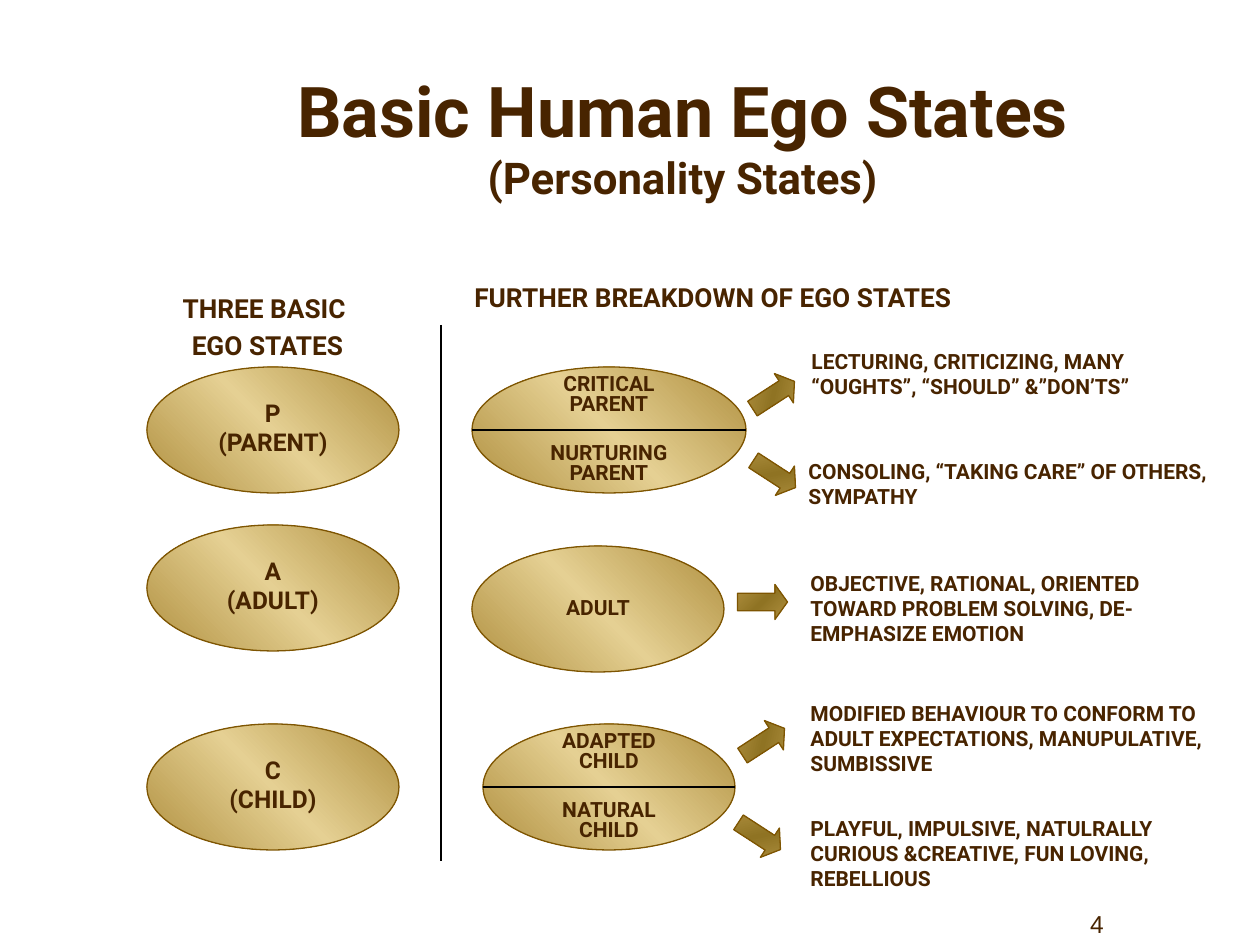
import copy
from dataclasses import dataclass

import pptx
import pptx.dml.color
import pptx.enum.shapes
import pptx.enum.text
import pptx.oxml
import pptx.oxml.ns
import pptx.util

ALIGN = pptx.enum.text.PP_ALIGN
ANCHOR = pptx.enum.text.MSO_ANCHOR
SHAPE = pptx.enum.shapes.MSO_SHAPE
PX_PER_INCH = 126


@dataclass(frozen=True)
class Theme:
    font: str = "Roboto"
    number_font: str = "Arial"
    ink: str = "482400"
    outline: str = "7E5502"
    rule: str = "000000"
    oval_fill: tuple = ("B09040", "E5D093", "B09040")
    arrow_fill: tuple = ("B09040", "8F7323", "B09040")
    title: int = 40
    subtitle: int = 25
    heading: int = 15
    state: int = 14
    label: int = 12
    line: float = 0.75


THEME = Theme()


def px(count):
    return pptx.util.Emu(round(count * 914400 / PX_PER_INCH))


def rgb(value):
    return pptx.dml.color.RGBColor.from_string(value)


def add_span(para, text, size, font=THEME.font, bold=True):
    span = para.add_run()
    span.text = text
    span.font.name = font
    span.font.size = pptx.util.Pt(size)
    span.font.bold = bold
    span.font.color.rgb = rgb(THEME.ink)


def write_lines(frame, lines, size, align=ALIGN.LEFT, spacing=None, gap=0, **style):
    """Write one paragraph per line, with gap points between them."""
    frame.word_wrap = True
    for index, line in enumerate(lines):
        para = frame.add_paragraph() if index else frame.paragraphs[0]
        para.alignment = align
        para.line_spacing = spacing
        para.space_before = pptx.util.Pt(gap if index else 0)
        add_span(para, line, size, **style)


def add_title(page, title, subtitle):
    holder = page.shapes.title
    holder.left, holder.top, holder.width, holder.height = map(px, (147, 100, 1071, 110))
    frame = holder.text_frame
    frame.auto_size = pptx.enum.text.MSO_AUTO_SIZE.NONE
    frame.vertical_anchor = ANCHOR.BOTTOM
    para = frame.paragraphs[0]
    para.alignment = ALIGN.CENTER
    add_span(para, title, THEME.title)
    para.add_line_break()
    add_span(para, subtitle, THEME.subtitle)


def add_text(page, left, top, width, height, lines, size, anchor=ANCHOR.TOP, **style):
    box = page.shapes.add_textbox(*map(px, (left, top, width, height)))
    box.text_frame.vertical_anchor = anchor
    write_lines(box.text_frame, lines, size, **style)


def add_gold_shape(page, kind, left, top, width, height, colors):
    """Add an outlined shape with a diagonal three-stop gradient."""
    shape = page.shapes.add_shape(kind, *map(px, (left, top, width, height)))
    shape.shadow.inherit = False
    shape.line.color.rgb = rgb(THEME.outline)
    shape.line.width = pptx.util.Pt(THEME.line)
    shape.fill.gradient()
    shape.fill.gradient_angle = 45
    stops = shape.element.spPr.find(".//" + pptx.oxml.ns.qn("a:gsLst"))
    stops.insert(1, copy.deepcopy(stops[0]))
    for stop, color, position in zip(shape.fill.gradient_stops, colors, (0, 0.5, 1)):
        stop.color.rgb = rgb(color)
        stop.position = position
    return shape


def add_oval(page, left, top, width, lines, size, gap):
    oval = add_gold_shape(page, SHAPE.OVAL, left, top, width, 126, THEME.oval_fill)
    oval.text_frame.vertical_anchor = ANCHOR.MIDDLE
    write_lines(oval.text_frame, lines, size, ALIGN.CENTER, spacing=0.8, gap=gap)


def add_arrow(page, left, top, rotation):
    arrow = add_gold_shape(page, SHAPE.UP_ARROW, left, top, 35, 50, THEME.arrow_fill)
    arrow.adjustments[0] = 0.5
    arrow.adjustments[1] = 0.36
    arrow.rotation = rotation


def add_rule(page, x1, y1, x2, y2):
    rule = page.shapes.add_connector(
        pptx.enum.shapes.MSO_CONNECTOR.STRAIGHT, *map(px, (x1, y1, x2, y2)))
    rule.line.color.rgb = rgb(THEME.rule)
    rule.line.width = pptx.util.Pt(THEME.line)
    pptx.oxml.ns.qn("a:effectLst")
    rule.element.spPr.append(pptx.oxml.parse_xml(
        f"<a:effectLst {pptx.oxml.ns.nsdecls('a')}/>"))


def add_split_oval(page, left, top, width, halves):
    add_oval(page, left, top, width, halves, THEME.label, gap=16)
    add_rule(page, left, top + 63, left + width, top + 63)


def main():
    deck = pptx.Presentation()
    deck.slide_width, deck.slide_height = px(1260), px(945)
    page = deck.slides.add_slide(deck.slide_layouts[5])

    add_title(page, "Basic Human Ego States", "(Personality States)")
    add_text(page, 105, 286, 325, 90, ["THREE BASIC ", "EGO STATES"],
             THEME.heading, align=ALIGN.CENTER, gap=3)
    add_text(page, 462, 275, 766, 45, ["FURTHER BREAKDOWN OF EGO STATES"], THEME.heading)
    add_rule(page, 441, 325, 441, 861)

    for top, letter, name in ((367, "P", "(PARENT)"),
                              (525, "A", "(ADULT)"),
                              (724, "C", "(CHILD)")):
        add_oval(page, 147, top, 252, [letter, name], THEME.state, gap=2.8)

    add_split_oval(page, 472, 367, 274, ["CRITICAL PARENT", "NURTURING PARENT"])
    add_oval(page, 472, 546, 252, ["ADULT"], THEME.label, gap=0)
    add_split_oval(page, 483, 724, 252, ["ADAPTED CHILD", "NATURAL CHILD"])

    rising, level, falling = 57, 90, 123
    for left, top, rotation in ((756, 370, rising), (757, 449, falling),
                                (745, 577, level),
                                (746, 717, rising), (742, 811, falling)):
        add_arrow(page, left, top, rotation)

    for left, top, height, trait in (
            (799, 342, 63, "LECTURING, CRITICIZING, MANY “OUGHTS”, “SHOULD” &”DON’TS”"),
            (796, 452, 63, "CONSOLING, “TAKING CARE” OF OTHERS, SYMPATHY"),
            (798, 564, 88, "OBJECTIVE, RATIONAL, ORIENTED TOWARD PROBLEM SOLVING, "
                           "DE-EMPHASIZE EMOTION"),
            (798, 694, 88, "MODIFIED BEHAVIOUR TO CONFORM TO ADULT EXPECTATIONS, "
                           "MANUPULATIVE, SUMBISSIVE"),
            (798, 809, 88, "PLAYFUL, IMPULSIVE, NATULRALLY CURIOUS &CREATIVE, "
                           "FUN LOVING, REBELLIOUS")):
        add_text(page, left, top, 433, height, [trait], THEME.label)

    add_text(page, 966, 882, 262, 63, ["4"], THEME.state, ANCHOR.BOTTOM,
             align=ALIGN.CENTER, font=THEME.number_font, bold=False)
    deck.save("out.pptx")


if __name__ == "__main__":
    main()
